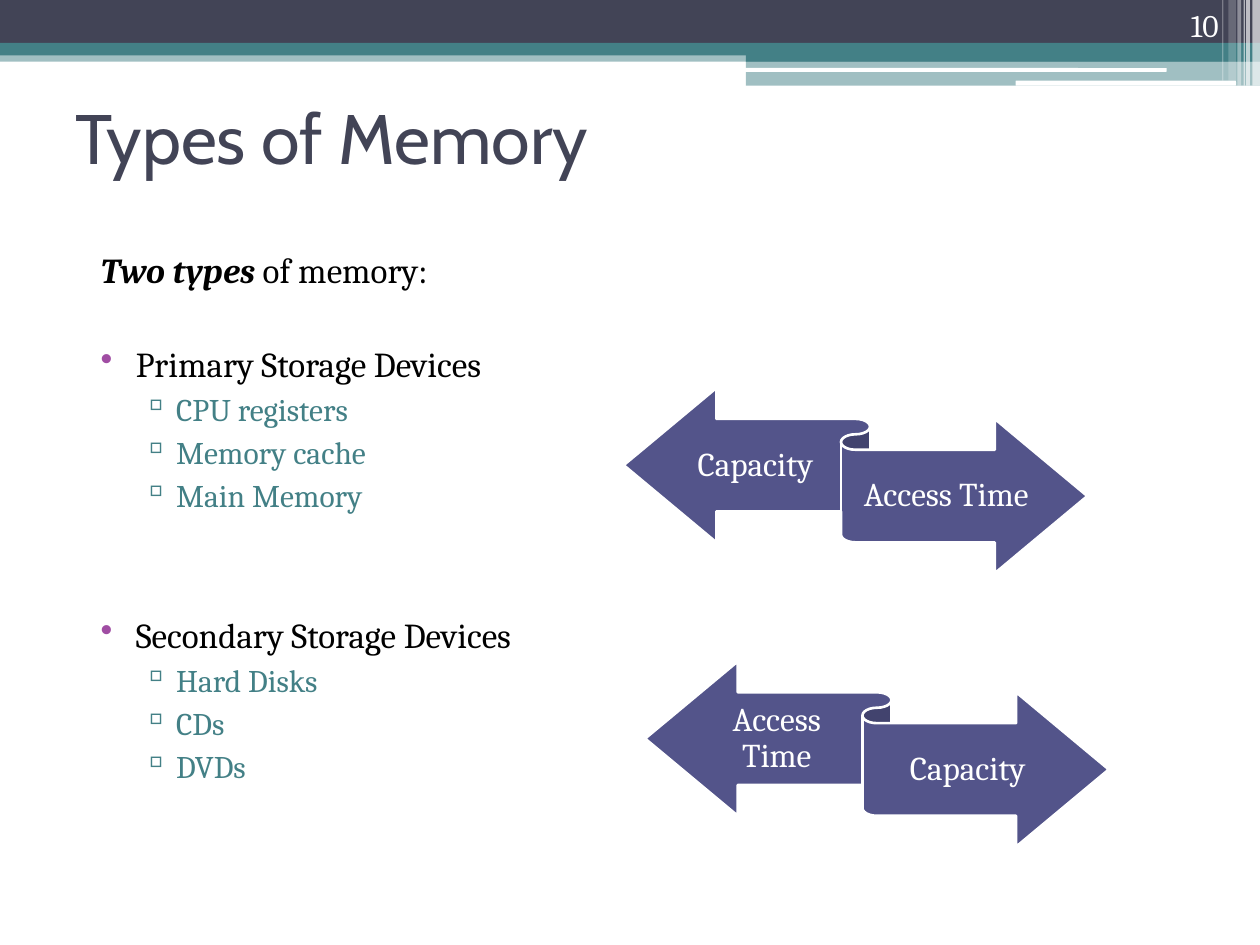
from lxml import etree
from pptx import Presentation
from pptx.dml.color import RGBColor
from pptx.enum.shapes import MSO_SHAPE as SHAPE
from pptx.enum.text import MSO_ANCHOR as ANCHOR, PP_ALIGN as ALIGN
from pptx.oxml.ns import qn
from pptx.util import Emu, Pt

EMU_PER_PX = 9144  # 100 px to the inch
NAVY, TEAL, INDIGO, PURPLE = "424456", "438086", "53548A", "A04DA3"
WHITE, BLACK = "FFFFFF", "000000"


def px(n):
    return Emu(n * EMU_PER_PX)


def rgb(color):
    return RGBColor.from_string(color)


class Deck:
    body_font, title_font = "Cambria", "Cabin"

    def __init__(self, prs):
        self.s = prs.slides.add_slide(prs.slide_layouts[5])

    def style(self, r, size, color, font=None):
        r.font.name = font or self.body_font
        r.font.size = Pt(size)
        r.font.color.rgb = rgb(color)

    def shape(self, kind, box, color, alpha=100, line=None):
        sp = self.s.shapes.add_shape(kind, *map(px, box))
        sp.shadow.inherit = False
        sp.fill.solid()
        sp.fill.fore_color.rgb = rgb(color)
        if alpha < 100:
            clr = sp.fill._xPr.find(".//" + qn("a:srgbClr"))
            etree.SubElement(clr, qn("a:alpha"), val=str(alpha * 1000))
        if line:
            sp.line.color.rgb = rgb(line)
            sp.line.width = Pt(1.5)
        else:
            sp.line.fill.background()

    def title(self, text, box):
        sp = self.s.shapes.title
        sp.left, sp.top, sp.width, sp.height = map(px, box)
        tf = sp.text_frame
        tf.text = text
        tf.vertical_anchor = ANCHOR.MIDDLE
        p = tf.paragraphs[0]
        p.alignment = ALIGN.LEFT
        self.style(p.runs[0], 40, NAVY, self.title_font)

    def frame(self, box, anchor=ANCHOR.TOP):
        tf = self.s.shapes.add_textbox(*map(px, box)).text_frame
        tf.word_wrap = True
        tf.vertical_anchor = anchor
        return tf

    def label(self, text, box, size, align, anchor):
        tf = self.frame(box, anchor)
        tf.text = text
        p = tf.paragraphs[0]
        p.alignment = align
        self.style(p.runs[0], size, WHITE)
        return tf

    def item(self, p, size, color, margin, indent, before=3, bullet=None, bullet_color=None):
        p.space_before = Pt(before)
        for r in p.runs:
            self.style(r, size, color)
        pPr = p._p.get_or_add_pPr()
        pPr.set("marL", str(px(margin)))
        pPr.set("indent", str(px(indent)))
        if bullet:
            clr = etree.SubElement(pPr, qn("a:buClr"))
            etree.SubElement(clr, qn("a:srgbClr"), val=bullet_color)
            etree.SubElement(pPr, qn("a:buChar"), char=bullet)

    def ribbon(self, x, y, left, right):
        self.shape(SHAPE.LEFT_RIGHT_RIBBON, (x, y, 368, 147), INDIGO, line=WHITE)
        for text, dx, dy, w in ((left, 44, 26, 121), (right, 184, 50, 144)):
            tf = self.label(text, (x + dx, y + dy, w, 72), 19, ALIGN.CENTER, ANCHOR.MIDDLE)
            tf.margin_left = tf.margin_right = 0
            tf.margin_top, tf.margin_bottom = px(7), px(8)
            tf.paragraphs[0].line_spacing = 0.9


def main():
    prs = Presentation()
    prs.slide_width, prs.slide_height = px(1000), px(750)
    deck = Deck(prs)

    # Header bands
    for box, color, alpha in (
        ((0, 40, 1000, 9), TEAL, 50),
        ((0, 0, 1000, 34), NAVY, 100),
        ((0, 34, 1000, 10), TEAL, 100),
        ((592, 39, 408, 10), TEAL, 100),
        ((592, 48, 408, 20), TEAL, 50),
    ):
        deck.shape(SHAPE.RECTANGLE, box, color, alpha)
    for box in ((591, 54, 335, 3), (806, 64, 175, 4)):
        deck.shape(SHAPE.ROUNDED_RECTANGLE, box, WHITE)

    # Translucent stripes at the right edge
    for x, w, h, alpha in ((994, 6, 68, 65), (989, 3, 68, 65), (987, 1, 68, 60),
                           (982, 3, 68, 40), (975, 6, 64, 20), (970, 1, 64, 30)):
        deck.shape(SHAPE.RECTANGLE, (x, 0, w, h), WHITE, alpha)

    # Title and page number
    deck.title("Types of Memory", (50, 50, 900, 117))
    deck.label("10", (894, 0, 83, 40), 18, ALIGN.RIGHT, ANCHOR.BOTTOM)

    # Outline of memory types
    tf = deck.frame((58, 192, 900, 477))
    p = tf.paragraphs[0]
    for text in ("Two types", " of memory:"):
        p.add_run().text = text
    deck.item(p, 20, BLACK, 40, -28)
    p.runs[0].font.bold = p.runs[0].font.italic = True
    for heading, before, devices in (
        ("Primary Storage Devices", 30, ("CPU registers", "Memory cache", "Main Memory")),
        ("Secondary Storage Devices", 57, ("Hard Disks", "CDs", "DVDs")),
    ):
        p = tf.add_paragraph()
        p.text = heading
        deck.item(p, 20, BLACK, 40, -28, before, "•", PURPLE)
        for device in devices:
            p = tf.add_paragraph()
            p.text = device
            p.level = 1
            deck.item(p, 18, TEAL, 72, -27, bullet="▫", bullet_color=TEAL)

    # Trade-off ribbons
    deck.ribbon(495, 308, "Capacity", "Access Time")
    deck.ribbon(512, 525, "Access Time", "Capacity")

    prs.save("out.pptx")


if __name__ == "__main__":
    main()
